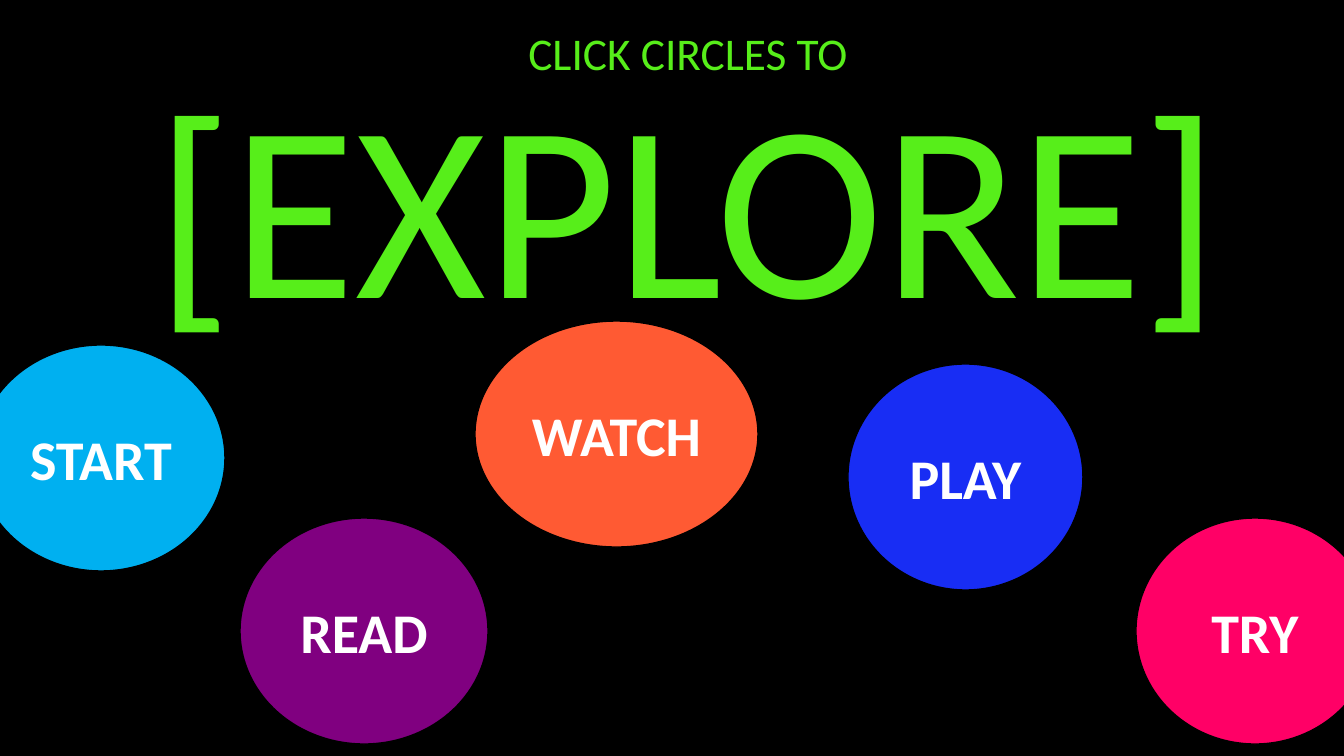
import pptx
import pptx.util
import pptx.dml.color
import pptx.enum.shapes
import pptx.enum.text

COLORS = {
    "black": "000000", "green": "57EE1A", "white": "FFFFFF", "sky": "00B0F0",
    "purple": "800080", "orange": "FF5A33", "blue": "182DF4", "pink": "FF0066",
}
FONT = "Calibri"
SLIDE_SIZE = (1344, 756)
TITLE_BOX = (121, 7, 1134, 370)
TITLE_LINES = [("CLICK CIRCLES TO", 32.4), ("[EXPLORE]", 180)]
CIRCLE_HEIGHT = 226
CIRCLES = [
    ("START", "sky", -23, 345, 248),
    ("READ", "purple", 240, 518, 248),
    ("WATCH", "orange", 475, 321, 283),
    ("PLAY", "blue", 848, 364, 235),
    ("TRY", "pink", 1136, 518, 238),
]
SCALE = 914400 / 100.8


def px(n):
    return pptx.util.Emu(round(n * SCALE))


def rgb(name):
    return pptx.dml.color.RGBColor.from_string(COLORS[name])


def centre(sp):
    tf = sp.text_frame
    tf.word_wrap = True
    tf.vertical_anchor = pptx.enum.text.MSO_ANCHOR.MIDDLE
    p = tf.paragraphs[0]
    p.alignment = pptx.enum.text.PP_ALIGN.CENTER
    return p


def add_run(p, text, size, color, bold=False):
    r = p.add_run()
    r.text = text
    r.font.name = FONT
    r.font.size = pptx.util.Pt(size)
    r.font.bold = bold
    r.font.color.rgb = rgb(color)


def add_title(slide):
    sp = slide.shapes.add_textbox(*map(px, TITLE_BOX))
    p = centre(sp)
    p.line_spacing = 0.9
    for i, (text, size) in enumerate(TITLE_LINES):
        if i:
            p.add_line_break()
        add_run(p, text, size, "green")


def add_circle(slide, label, color, left, top, width):
    sp = slide.shapes.add_shape(
        pptx.enum.shapes.MSO_SHAPE.OVAL, *map(px, (left, top, width, CIRCLE_HEIGHT)))
    sp.shadow.inherit = False
    sp.fill.solid()
    sp.fill.fore_color.rgb = rgb(color)
    sp.line.color.rgb = rgb("black")
    sp.line.width = pptx.util.Pt(1)
    add_run(centre(sp), label, 40, "white", bold=True)


def main():
    prs = pptx.Presentation()
    prs.slide_width, prs.slide_height = map(px, SLIDE_SIZE)
    slide = prs.slides.add_slide(prs.slide_layouts[6])
    slide.background.fill.solid()
    slide.background.fill.fore_color.rgb = rgb("black")
    add_title(slide)
    for circle in CIRCLES:
        add_circle(slide, *circle)
    prs.save("out.pptx")


if __name__ == "__main__":
    main()
